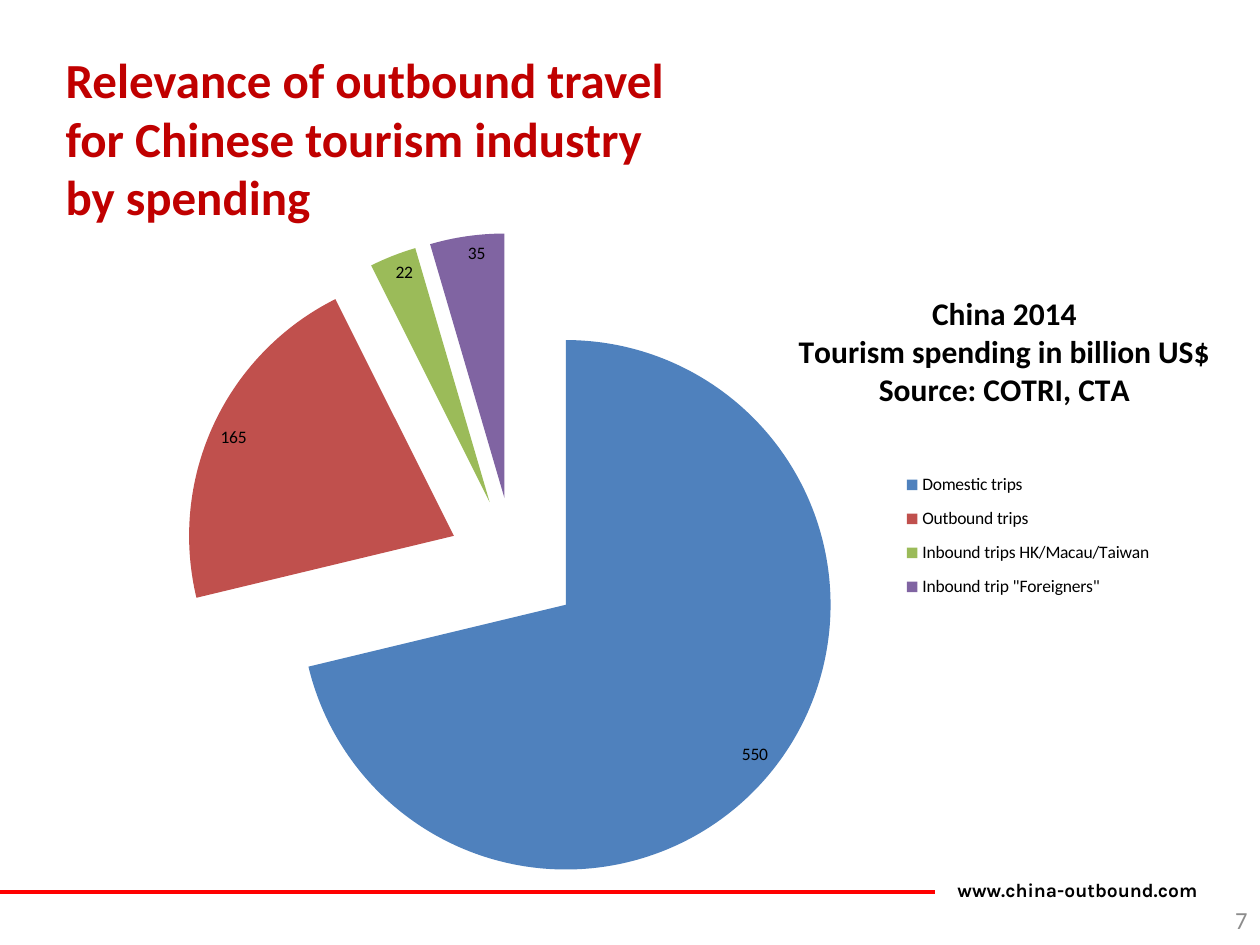
"""Builds the slide on Chinese tourism spending with its exploded pie chart."""
from dataclasses import dataclass

from lxml.etree import SubElement
from pptx import Presentation
from pptx.chart.data import CategoryChartData
from pptx.dml.color import RGBColor
from pptx.enum.chart import XL_CHART_TYPE, XL_LABEL_POSITION, XL_LEGEND_POSITION
from pptx.enum.shapes import MSO_CONNECTOR
from pptx.enum.text import MSO_ANCHOR, MSO_AUTO_SIZE, PP_ALIGN
from pptx.oxml import parse_xml
from pptx.oxml.ns import nsdecls, qn
from pptx.util import Emu, Pt

EMU_PER_PX = 914400 / 126
CHART_BOX = (53, 43, 1187, 871)
PIE_BOX = (183, 233, 662, 662)
CAPTION_BOX = (795, 289, 420, 120)
LEGEND_BOX = (900, 461, 256, 150)
HEADLINE = ("Relevance of outbound travel", "for Chinese tourism industry", "by spending")
CAPTION = "China 2014\nTourism spending in billion US$\nSource: COTRI, CTA"
SPENDING = {
    "Domestic trips": 550,
    "Outbound trips": 165,
    "Inbound trips HK/Macau/Taiwan": 22,
    'Inbound trip "Foreigners"': 35,
}


@dataclass(frozen=True)
class Theme:
    headline = {"name": "Calibri", "size": Pt(28), "bold": True, "color": "C00000"}
    caption = {"name": "Calibri", "size": Pt(18), "bold": True, "color": "000000"}
    chart = {"name": "Calibri", "size": Pt(10), "bold": False, "color": "000000"}
    website = {"name": "Karla", "size": Pt(11), "bold": True, "color": "000000"}
    page = {"name": "Calibri", "size": Pt(14), "bold": False, "color": "8C8C8C"}
    slices = ("4F81BD", "C0504D", "9BBB59", "8064A2")
    rule = "FF0000"
    rule_width = Pt(2.5)


def px(length):
    return Emu(round(length * EMU_PER_PX))


def style(font, values):
    for key, value in values.items():
        if key == "color":
            font.color.rgb = RGBColor.from_string(value)
        else:
            setattr(font, key, value)


def fill_text(frame, lines, font, align=PP_ALIGN.LEFT, **settings):
    frame.text = "\n".join(lines)
    for key, value in settings.items():
        setattr(frame, key, value)
    for paragraph in frame.paragraphs:
        paragraph.alignment = align
        style(paragraph.font, font)


def add_headline(slide):
    headline = slide.shapes.title
    headline.left, headline.top, headline.width, headline.height = map(px, (53, 43, 641, 190))
    fill_text(headline.text_frame, HEADLINE, Theme.headline, word_wrap=False,
              vertical_anchor=MSO_ANCHOR.TOP, auto_size=MSO_AUTO_SIZE.SHAPE_TO_FIT_TEXT)
    slide.shapes._spTree.append(headline._element)


def add_label(slide, box, text, font, **settings):
    label = slide.shapes.add_textbox(*map(px, box))
    fill_text(label.text_frame, [text], font, word_wrap=True, **settings)


def add_rule(slide, start, end):
    rule = slide.shapes.add_connector(MSO_CONNECTOR.STRAIGHT, *map(px, start + end))
    rule.line.color.rgb = RGBColor.from_string(Theme.rule)
    rule.line.width = Theme.rule_width
    SubElement(rule._element.spPr, qn("a:effectLst"))


def place_in_chart(part, index, box, inner=False):
    """Sets a manual layout for a chart part from its box on the slide."""
    left, top, width, height = CHART_BOX
    fractions = {"x": (box[0] - left) / width, "y": (box[1] - top) / height,
                 "w": box[2] / width, "h": box[3] / height}
    for layout in part.findall(qn("c:layout")):
        part.remove(layout)
    target = '<c:layoutTarget val="inner"/>' if inner else ""
    modes = "".join(f'<c:{key}Mode val="edge"/>' for key in "xy")
    sizes = "".join(f'<c:{key} val="{value:.4f}"/>' for key, value in fractions.items())
    part.insert(index, parse_xml(
        f'<c:layout {nsdecls("c")}><c:manualLayout>{target}{modes}{sizes}'
        "</c:manualLayout></c:layout>"))


def add_spending_pie(slide):
    spending = CategoryChartData()
    spending.categories = list(SPENDING)
    spending.add_series(CAPTION, list(SPENDING.values()))
    chart = slide.shapes.add_chart(XL_CHART_TYPE.PIE, *map(px, CHART_BOX), spending).chart
    style(chart.font, Theme.chart)

    fill_text(chart.chart_title.text_frame, CAPTION.split("\n"), Theme.caption, PP_ALIGN.CENTER)
    chart.has_legend = True
    chart.legend.position = XL_LEGEND_POSITION.RIGHT
    chart.legend.include_in_layout = False
    place_in_chart(chart.chart_title._element, 1, CAPTION_BOX)
    place_in_chart(chart.legend._element, 1, LEGEND_BOX)
    place_in_chart(chart._chartSpace.chart.plotArea, 0, PIE_BOX, inner=True)

    pie = chart.plots[0]
    pie.vary_by_categories = True
    series = pie.series[0]
    series._element.find(qn("c:tx")).addnext(
        parse_xml(f'<c:explosion {nsdecls("c")} val="25"/>'))
    for index, color in enumerate(Theme.slices):
        fill = series.points[index].format.fill
        fill.solid()
        fill.fore_color.rgb = RGBColor.from_string(color)
    labels = series.data_labels
    labels.show_value = True
    labels.position = XL_LABEL_POSITION.INSIDE_END
    style(labels.font, Theme.chart)


def main():
    deck = Presentation()
    deck.slide_width, deck.slide_height = px(1260), px(945)
    slide = deck.slides.add_slide(deck.slide_layouts[5])
    add_rule(slide, (0, 892), (935, 892))
    add_label(slide, (945, 872, 294, 37), "www.china-outbound.com", Theme.website)
    add_spending_pie(slide)
    add_label(slide, (1092, 895, 168, 50), "7", Theme.page,
              align=PP_ALIGN.RIGHT, vertical_anchor=MSO_ANCHOR.MIDDLE)
    add_headline(slide)
    deck.save("out.pptx")


if __name__ == "__main__":
    main()
